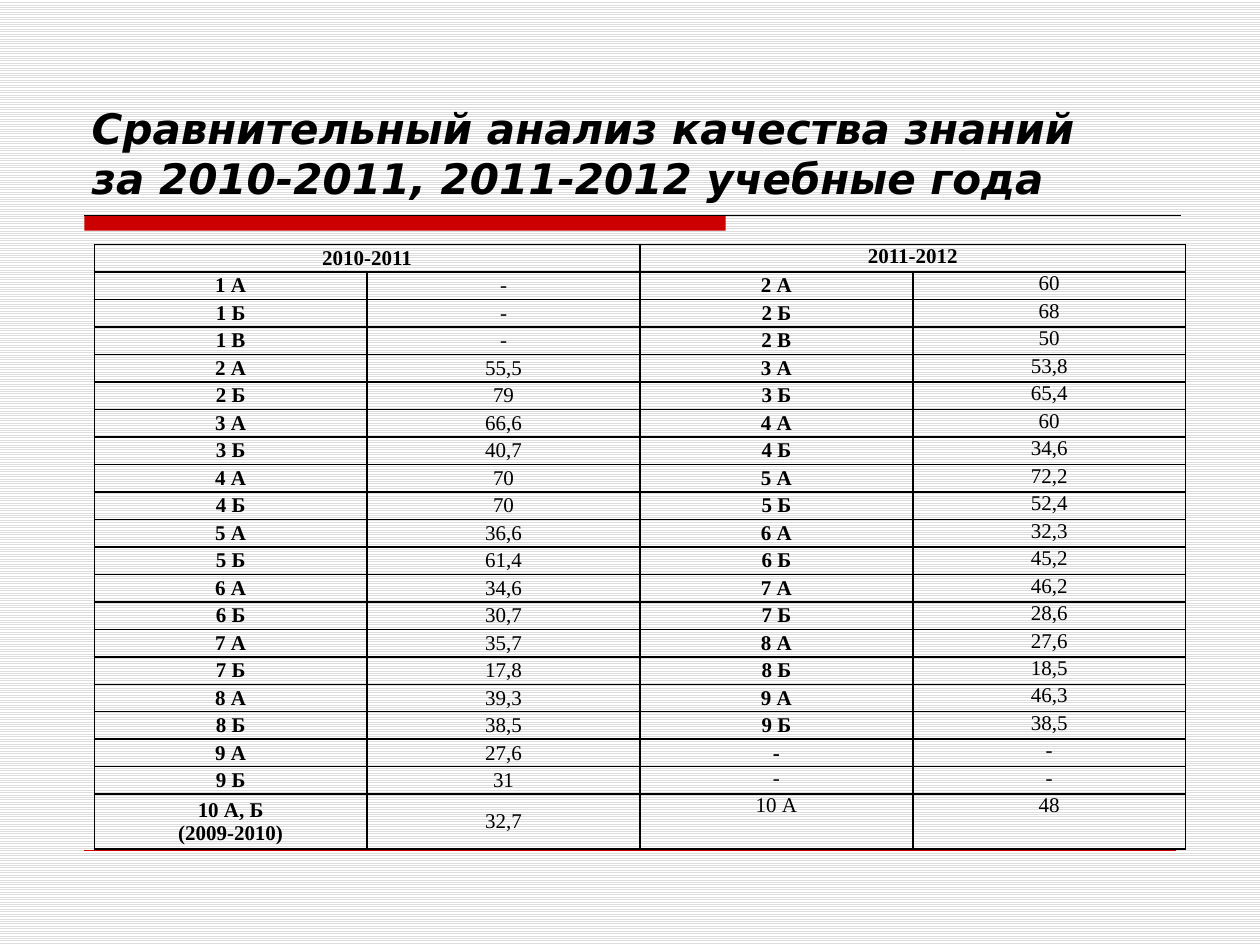
from typing import NamedTuple

from lxml import etree
from pptx import Presentation
from pptx.dml.color import RGBColor
from pptx.enum import dml, shapes, text
from pptx.oxml import ns
from pptx.util import Cm, Pt

BLACK = RGBColor(0, 0, 0)
WHITE = RGBColor(255, 255, 255)
GREY = RGBColor(0xDD, 0xDD, 0xDD)
RED = RGBColor(0xCC, 0, 0)
TOP, MID, LOW = (text.MSO_ANCHOR.TOP, text.MSO_ANCHOR.MIDDLE,
                 text.MSO_ANCHOR.BOTTOM)


class Row(NamedTuple):
    old: str
    was: str
    new: str
    now: str


class Rule(NamedTuple):
    left: float
    right: float
    y: float
    color: RGBColor
    width: float


RULES = [
    Rule(1.7, 23.8, 4.34, BLACK, 0.75),
    Rule(1.7, 23.7, 17.14, RED, 0.25),
]

ROWS = [
    Row("1 А", "-", "2 А", "60"),
    Row("1 Б", "-", "2 Б", "68"),
    Row("1 В", "-", "2 В", "50"),
    Row("2 А", "55,5", "3 А", "53,8"),
    Row("2 Б", "79", "3 Б", "65,4"),
    Row("3 А", "66,6", "4 А", "60"),
    Row("3 Б", "40,7", "4 Б", "34,6"),
    Row("4 А", "70", "5 А", "72,2"),
    Row("4 Б", "70", "5 Б", "52,4"),
    Row("5 А", "36,6", "6 А", "32,3"),
    Row("5 Б", "61,4", "6 Б", "45,2"),
    Row("6 А", "34,6", "7 А", "46,2"),
    Row("6 Б", "30,7", "7 Б", "28,6"),
    Row("7 А", "35,7", "8 А", "27,6"),
    Row("7 Б", "17,8", "8 Б", "18,5"),
    Row("8 А", "39,3", "9 А", "46,3"),
    Row("8 Б", "38,5", "9 Б", "38,5"),
    Row("9 А", "27,6", "-", "-"),
    Row("9 Б", "31", "-", "-"),
    Row("10 А, Б\n(2009-2010)", "32,7", "10 А", "48"),
]


def write(frame, words: str, *, font="Times New Roman", size=12, bold=False,
          italic=False, align=text.PP_ALIGN.CENTER) -> None:
    """Fill a text frame: a newline starts a paragraph, \\v breaks a line."""
    frame.text = words
    for para in frame.paragraphs:
        para.alignment = align
        for run in para.runs:
            face = run.font
            face.name, face.size = font, Pt(size)
            face.bold, face.italic = bold, italic
            face.color.rgb = BLACK


def draw_rule(slide, rule: Rule) -> None:
    line = slide.shapes.add_connector(
        shapes.MSO_CONNECTOR.STRAIGHT,
        Cm(rule.left), Cm(rule.y), Cm(rule.right), Cm(rule.y))
    line.line.color.rgb = rule.color
    line.line.width = Pt(rule.width)
    etree.SubElement(line._element.spPr, ns.qn("a:effectLst"))


def frame_cell(cell) -> None:
    """Give a cell black borders, no fill and narrow margins."""
    props = cell._tc.get_or_add_tcPr()
    for side in ("lnL", "lnR", "lnT", "lnB"):
        edge = etree.SubElement(props, ns.qn(f"a:{side}"), w=str(Pt(1)))
        fill = etree.SubElement(edge, ns.qn("a:solidFill"))
        etree.SubElement(fill, ns.qn("a:srgbClr"), val=str(BLACK))
    cell.fill.background()
    cell.margin_left = cell.margin_right = Cm(0.16)
    cell.margin_top = cell.margin_bottom = 0


def draw_table(slide, rows: list[Row]) -> None:
    high, wide = Cm(12.19), Cm(22)
    grid = slide.shapes.add_table(
        len(rows) + 1, 4, Cm(1.9), Cm(4.93), wide, high).table
    grid.first_row = grid.horz_banding = False
    unit = high // (len(rows) + 2)
    for row in grid.rows:
        row.height = unit
    grid.rows[len(rows)].height = 2 * unit  # the last row holds two lines
    for cell in grid.iter_cells():
        frame_cell(cell)

    # Year headings
    for col, year, anchor in ((0, "2010-2011", MID), (2, "2011-2012", TOP)):
        head = grid.cell(0, col)
        head.merge(grid.cell(0, col + 1))
        write(head.text_frame, year, bold=True)
        head.vertical_anchor = anchor

    # Classes and their results
    for r, row in enumerate(rows, 1):
        plain = r > len(rows) - 2  # right half of the last two rows
        for c, words in enumerate(row):
            cell = grid.cell(r, c)
            write(cell.text_frame, words,
                  bold=c == 0 or (c == 2 and not plain))
            top = c == 3 or (c == 2 and plain)
            cell.vertical_anchor = TOP if top else MID


def main() -> None:
    deck = Presentation()
    deck.slide_width, deck.slide_height = Cm(25.4), Cm(19.05)
    slide = deck.slides.add_slide(deck.slide_layouts[6])

    # Lined background
    back = slide.background.fill
    back.patterned()
    back.pattern = dml.MSO_PATTERN.LIGHT_HORIZONTAL
    back.fore_color.rgb, back.back_color.rgb = GREY, WHITE

    # Red bar and thin rules
    bar = slide.shapes.add_shape(shapes.MSO_SHAPE.RECTANGLE,
                                 Cm(1.7), Cm(4.34), Cm(12.93), Cm(0.31))
    bar.shadow.inherit = False
    bar.fill.solid()
    bar.fill.fore_color.rgb = RED
    bar.line.fill.background()
    for rule in RULES:
        draw_rule(slide, rule)

    # Title
    title = slide.shapes.add_textbox(Cm(1.6), Cm(0.84), Cm(22.23), Cm(3.38))
    frame = title.text_frame
    frame.word_wrap = True
    frame.vertical_anchor = LOW
    write(frame, "Сравнительный анализ качества знаний\v"
          "за 2010-2011, 2011-2012 учебные года", font="DejaVu Sans",
          size=24, bold=True, italic=True, align=text.PP_ALIGN.LEFT)

    draw_table(slide, ROWS)
    deck.save("out.pptx")


if __name__ == "__main__":
    main()
